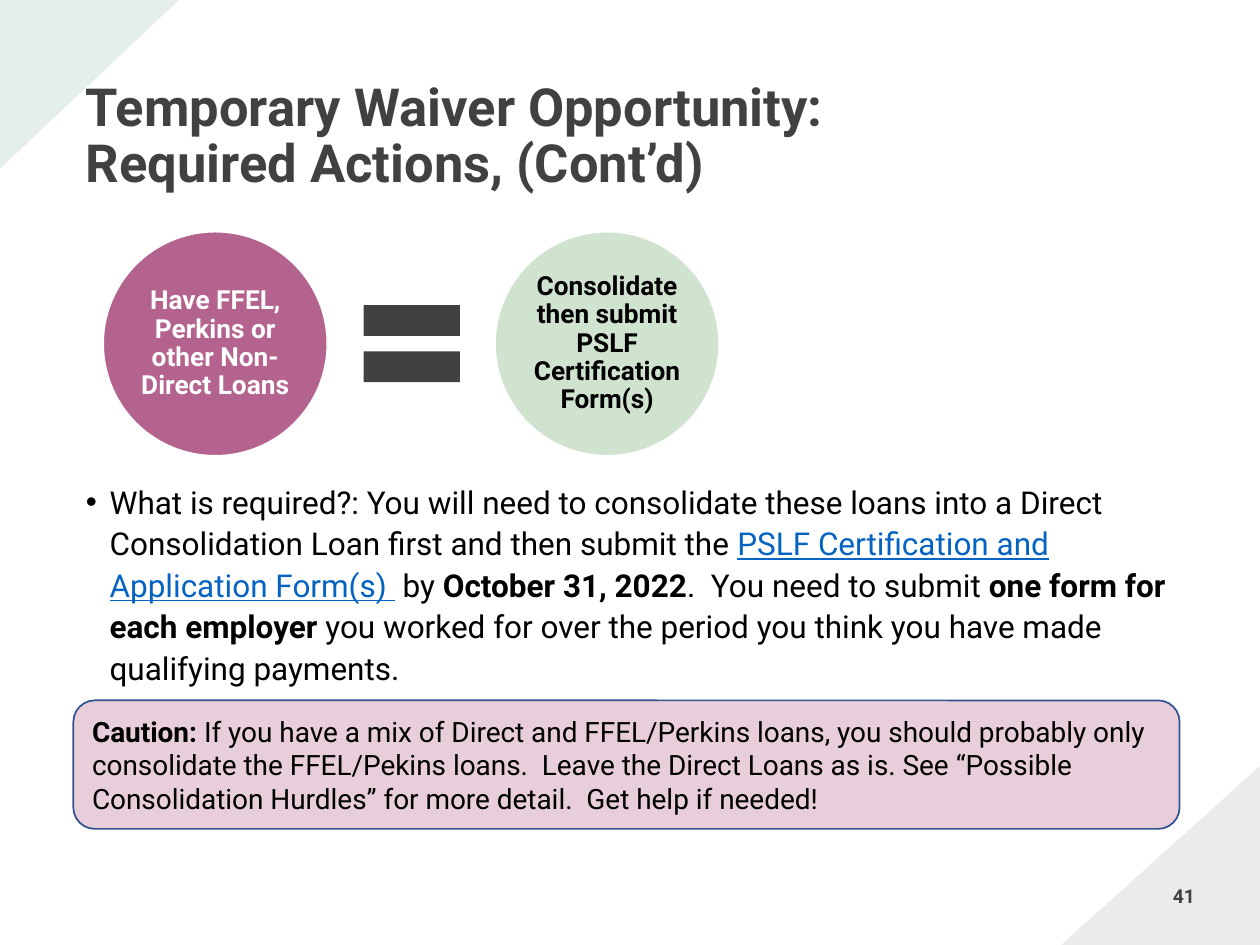
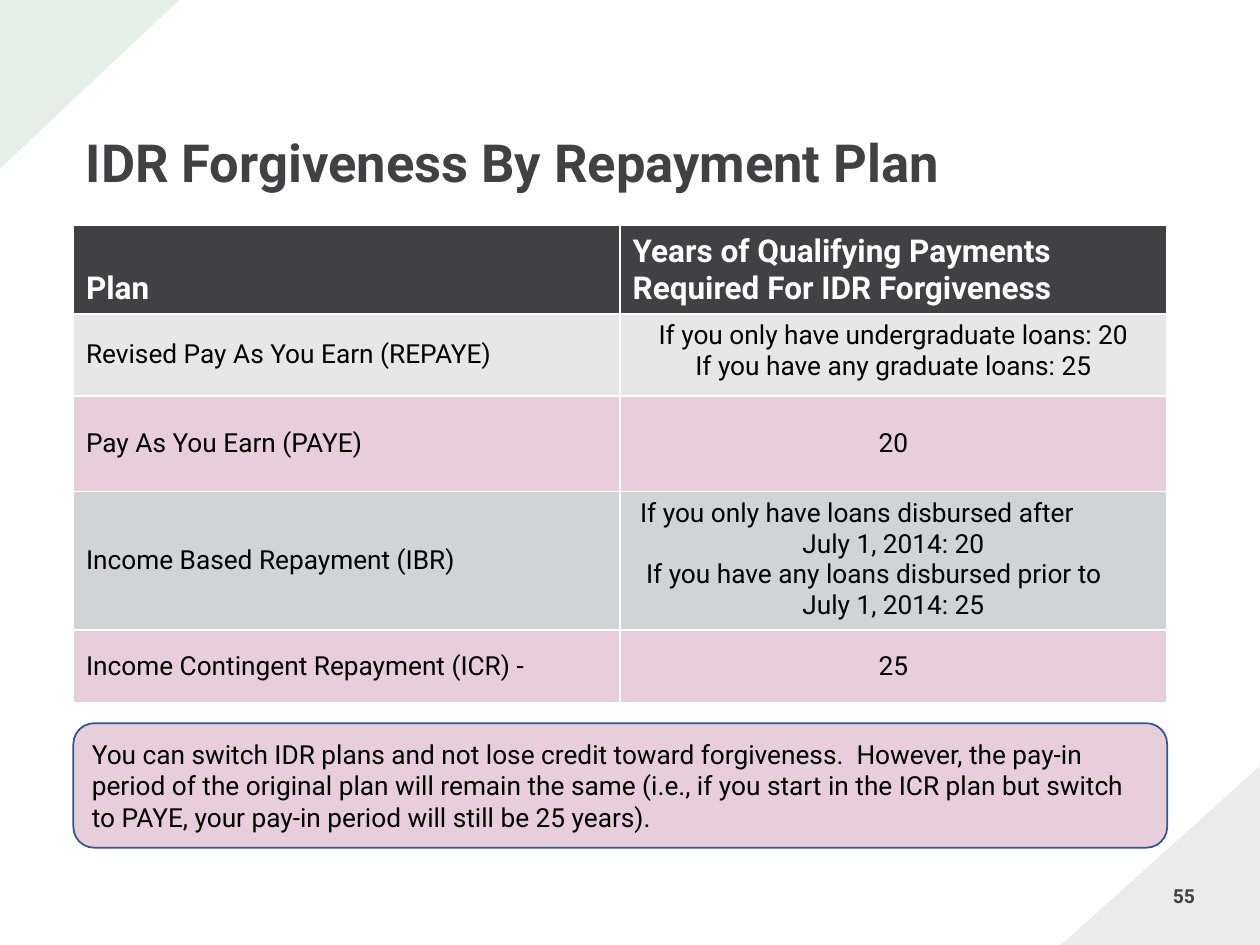
from lxml import etree
from pptx import Presentation
from pptx.dml.color import RGBColor
from pptx.enum.shapes import MSO_SHAPE
from pptx.enum.text import MSO_ANCHOR, PP_ALIGN
from pptx.oxml.ns import qn
from pptx.util import Cm, Pt

LEFT, CENTER, RIGHT = PP_ALIGN.LEFT, PP_ALIGN.CENTER, PP_ALIGN.RIGHT
TOP, MIDDLE, BOTTOM = MSO_ANCHOR.TOP, MSO_ANCHOR.MIDDLE, MSO_ANCHOR.BOTTOM
OVAL, EQUALS = MSO_SHAPE.OVAL, MSO_SHAPE.MATH_EQUAL
ROUNDED, TRIANGLE = MSO_SHAPE.ROUNDED_RECTANGLE, MSO_SHAPE.RIGHT_TRIANGLE

FONT = "Roboto"
CHARCOAL, GREEN, BLACK, WHITE = "414042", "056839", "000000", "FFFFFF"
PLUM, MINT, PINK = "B3638D", "D0E3CF", "E8CEDA"
OUTLINE, LINK = "325491", "0563C1"
MARGIN = Cm(1.48)


def color(hex_string):
    return RGBColor.from_string(hex_string)


def write(frame, pieces, size, hex_string, bold=False, align=LEFT, anchor=TOP, spacing=None):
    """Fill a frame with one text, or with (text, style) pieces of one paragraph."""
    frame.word_wrap = True
    frame.vertical_anchor = anchor
    if isinstance(pieces, str):
        frame.text = pieces
        styles = None
    else:
        for text, style in pieces:
            frame.paragraphs[0].add_run().text = text
        styles = [style for text, style in pieces]
    for paragraph in frame.paragraphs:
        paragraph.alignment = align
        paragraph.line_spacing = spacing
        for index, run in enumerate(paragraph.runs):
            style = styles[index] if styles else ""
            run.font.name = FONT
            run.font.size = Pt(size)
            run.font.bold = bold or style == "bold"
            run.font.underline = style == "link"
            run.font.color.rgb = color(LINK if style == "link" else hex_string)


presentation = Presentation()
presentation.slide_width, presentation.slide_height = Cm(25.4), Cm(19.05)

# Shared parts: corner triangles, title, page number and callout
pages = [
    ("Temporary Waiver Opportunity:\vRequired Actions, (Cont’d)", "41",
     [("Caution: ", "bold"),
      ("If you have a mix of Direct and FFEL/Perkins loans, you should probably only "
       "consolidate the FFEL/Pekins loans.  Leave the Direct Loans as is. See “Possible "
       "Consolidation Hurdles” for more detail.  Get help if needed!", "")],
     16, (14.12, 22.3, 2.59)),
    ("IDR Forgiveness By Repayment Plan", "55",
     "You can switch IDR plans and not lose credit toward forgiveness.  However, the pay-in "
     "period of the original plan will remain the same (i.e., if you start in the ICR plan "
     "but switch to PAYE, your pay-in period will still be 25 years).",
     15, (14.58, 22.05, 2.51)),
]
corners = [
    (21.59, 15.24, 3.61, 4.01, 270, CHARCOAL),
    (0.1, -0.1, 3.4, 3.61, 90, GREEN),
]
slides = []
for title, number, callout_text, callout_size, (top, width, height) in pages:
    slide = presentation.slides.add_slide(presentation.slide_layouts[6])
    slides.append(slide)

    for x, y, w, h, rotation, tint in corners:
        corner = slide.shapes.add_shape(TRIANGLE, Cm(x), Cm(y), Cm(w), Cm(h))
        corner.rotation = rotation
        corner.shadow.inherit = False
        corner.line.fill.background()
        corner.fill.solid()
        corner.fill.fore_color.rgb = color(tint)
        tint_element = corner._element.spPr.find(qn("a:solidFill"))[0]
        etree.SubElement(tint_element, qn("a:alpha"), val="10000")

    title_box = slide.shapes.add_textbox(MARGIN, Cm(0.64), Cm(22.43), Cm(3.4))
    write(title_box.text_frame, title, 30, CHARCOAL, bold=True, anchor=BOTTOM, spacing=0.9)

    number_box = slide.shapes.add_textbox(Cm(18.62), Cm(17.7), Cm(5.72), Cm(1.02))
    write(number_box.text_frame, number, 11, CHARCOAL, bold=True, align=RIGHT)

    callout = slide.shapes.add_shape(ROUNDED, MARGIN, Cm(top), Cm(width), Cm(height))
    callout.shadow.inherit = False
    callout.fill.solid()
    callout.fill.fore_color.rgb = color(PINK)
    callout.line.color.rgb = color(OUTLINE)
    callout.line.width = Pt(1)
    write(callout.text_frame, callout_text, callout_size, BLACK, anchor=MIDDLE)

waiver_slide, plans_slide = slides

# Waiver: two circles joined by an equals sign
circles = [
    (2.08, PLUM, WHITE, "Have FFEL, Perkins or other Non-Direct Loans"),
    (9.98, MINT, BLACK, "Consolidate then submit PSLF Certification Form(s)"),
]
for x, fill, text_color, text in circles:
    circle = waiver_slide.shapes.add_shape(OVAL, Cm(x), Cm(4.67), Cm(4.52), Cm(4.52))
    circle.shadow.inherit = False
    circle.fill.solid()
    circle.fill.fore_color.rgb = color(fill)
    circle.line.color.rgb = color(WHITE)
    circle.line.width = Pt(1)
    frame = circle.text_frame
    frame.margin_left = frame.margin_right = frame.margin_top = frame.margin_bottom = Cm(0.05)
    write(frame, text, 15, text_color, bold=True, align=CENTER, anchor=MIDDLE, spacing=0.9)

equals = waiver_slide.shapes.add_shape(EQUALS, Cm(6.98), Cm(5.61), Cm(2.64), Cm(2.64))
equals.shadow.inherit = False
equals.fill.solid()
equals.fill.fore_color.rgb = color(CHARCOAL)
equals.line.fill.background()

# Waiver: bulleted requirement
requirement = waiver_slide.shapes.add_textbox(MARGIN, Cm(9.53), Cm(22.43), Cm(6.17))
properties = requirement.text_frame.paragraphs[0]._p.get_or_add_pPr()
properties.set("marL", str(Cm(0.48)))
properties.set("indent", str(-Cm(0.48)))
etree.SubElement(properties, qn("a:buFont"), typeface="Arial")
etree.SubElement(properties, qn("a:buChar"), char="•")
write(requirement.text_frame, [
    ("What is required?: You will need to consolidate these loans into a Direct "
     "Consolidation Loan first and then submit the ", ""),
    ("PSLF Certification and Application Form(s) ", "link"),
    (" by ", ""),
    ("October 31, 2022", "bold"),
    (".  You need to submit ", ""),
    ("one form for each employer ", "bold"),
    ("you worked for over the period you think you have made qualifying payments.", ""),
], 18, BLACK, spacing=1.1)

# Plans: table of repayment plans
rows = [
    (1.73, CHARCOAL, "Plan", "Years of Qualifying Payments Required For IDR Forgiveness"),
    (1.65, "E7E7E8", "Revised Pay As You Earn (REPAYE)",
     "If you only have undergraduate loans: 20\nIf you have any graduate loans: 25"),
    (1.93, PINK, "Pay As You Earn (PAYE)", "20"),
    (2.69, "D1D3D4", "Income Based Repayment (IBR)",
     "If you only have loans disbursed after\nJuly 1, 2014: 20\n"
     "If you have any loans disbursed prior to\nJuly 1, 2014: 25"),
    (1.47, PINK, "Income Contingent Repayment (ICR) -", "25"),
]
table = plans_slide.shapes.add_table(
    len(rows), 2, MARGIN, Cm(4.55), Cm(22.04), Cm(9.47)).table
for column in table.columns:
    column.width = Cm(11.02)
for row_index, (height, fill, *texts) in enumerate(rows):
    table.rows[row_index].height = Cm(height)
    header = row_index == 0
    for column_index, text in enumerate(texts):
        cell = table.cell(row_index, column_index)
        cell.fill.solid()
        cell.fill.fore_color.rgb = color(fill)
        anchor = TOP if "\n" in text else BOTTOM if text == "Plan" else MIDDLE
        write(cell.text_frame, text, 18 if header else 15, WHITE if header else BLACK,
              bold=header, align=CENTER if column_index and not header else LEFT)
        cell.vertical_anchor = anchor

# Plans: the opening lines of the IBR conditions start near the left edge
conditions = table.cell(3, 1).text_frame.paragraphs
for paragraph, indent in ((conditions[0], 0.15), (conditions[2], 0.27)):
    paragraph.alignment = LEFT
    paragraph._p.get_or_add_pPr().set("marL", str(Cm(indent)))

presentation.save("out.pptx")
